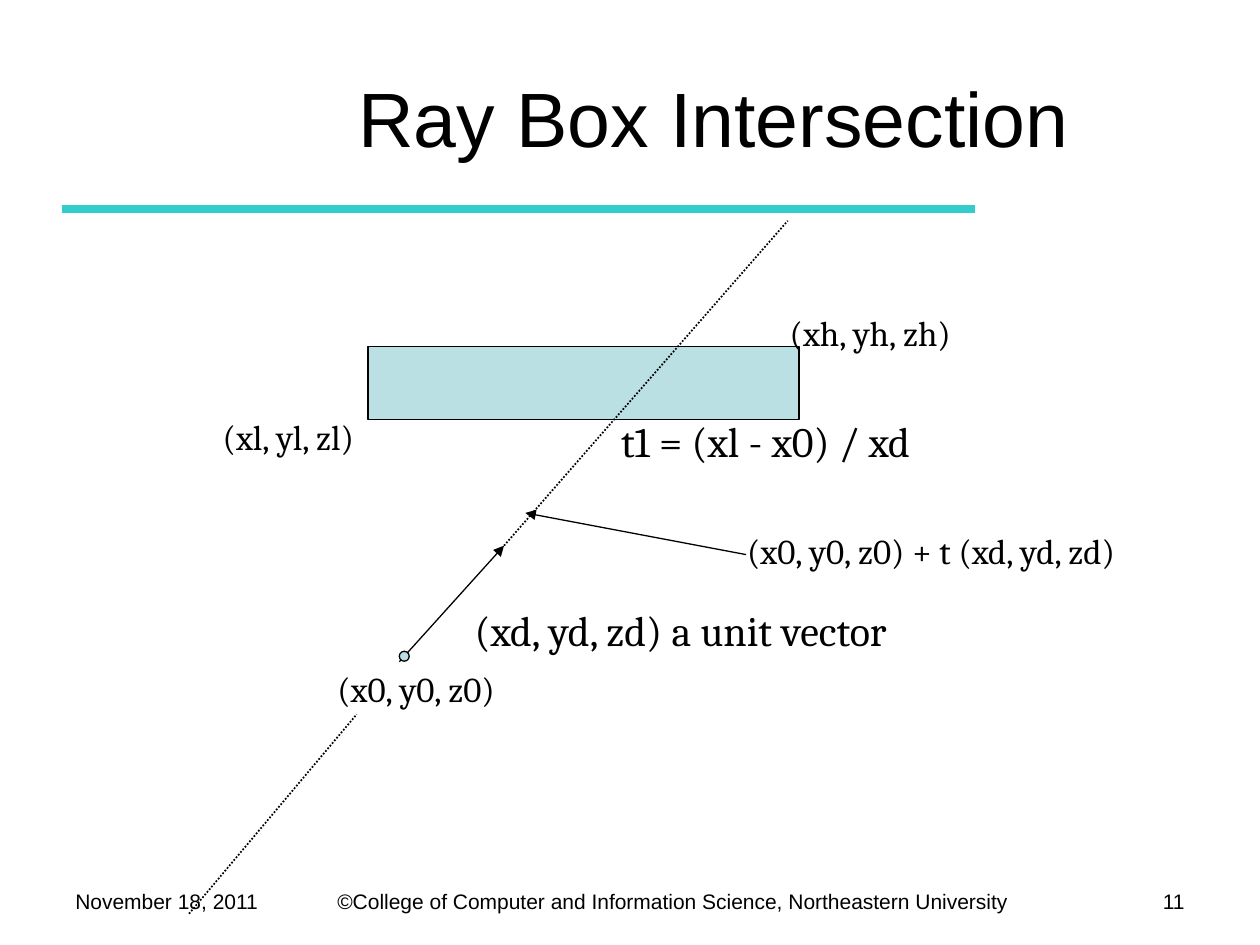
from lxml import etree
from pptx import Presentation
from pptx.dml.color import RGBColor
from pptx.enum.dml import MSO_LINE
from pptx.enum.shapes import MSO_CONNECTOR, MSO_SHAPE
from pptx.enum.text import MSO_ANCHOR, PP_ALIGN
from pptx.oxml.ns import qn
from pptx.util import Cm, Pt

BLACK = RGBColor(0x00, 0x00, 0x00)
TEAL = RGBColor(0x33, 0xCC, 0xCC)
PALE = RGBColor(0xBB, 0xE0, 0xE3)
LEFT, MID, RIGHT = PP_ALIGN.LEFT, PP_ALIGN.CENTER, PP_ALIGN.RIGHT
TOP, MIDDLE = MSO_ANCHOR.TOP, MSO_ANCHOR.MIDDLE
RECT, OVAL = MSO_SHAPE.RECTANGLE, MSO_SHAPE.OVAL
DOTS = MSO_LINE.ROUND_DOT
STRAIGHT = MSO_CONNECTOR.STRAIGHT

deck = Presentation()
deck.slide_width = Cm(25.4)
deck.slide_height = Cm(19.05)
slide = deck.slides.add_slide(deck.slide_layouts[6])
shapes = slide.shapes


def write(text, box, size=20, font="Cambria", align=LEFT, anchor=TOP):
    frame = shapes.add_textbox(*map(Cm, box)).text_frame
    frame.word_wrap = True
    frame.vertical_anchor = anchor
    par = frame.paragraphs[0]
    par.alignment = align
    run = par.add_run()
    run.text = text
    run.font.size = Pt(size)
    run.font.name = font
    run.font.color.rgb = BLACK


def draw(ends, width=0.75, color=BLACK, dash=None, arrow=False):
    line = shapes.add_connector(STRAIGHT, *map(Cm, ends))
    line.line.width = Pt(width)
    line.line.color.rgb = color
    if dash:
        line.line.dash_style = dash
    if arrow:
        etree.SubElement(line.line._get_or_add_ln(), qn("a:tailEnd"), type="triangle")
    etree.SubElement(line._element.spPr, qn("a:effectLst"))


draw((1.24, 4.22, 19.66, 4.22), width=4.5, color=TEAL)
write("Ray Box Intersection", (4.65, 0.76, 19.48, 3.18), size=44, font="Arial",
      align=MID, anchor=MIDDLE)

for text, box, align in (
    ("November 18, 2011", (1.27, 17.78, 4.45, 0.84), LEFT),
    ("©College of Computer and Information Science, Northeastern University",
     (6.55, 17.78, 14.38, 0.76), LEFT),
    ("11", (22.02, 17.78, 2.11, 0.89), RIGHT),
):
    write(text, box, size=12, font="Arial", align=align)

start, tip = (8.05, 13.34), (10.16, 11)
for kind, box in (
    (RECT, (7.42, 6.99, 8.69, 1.47)),
    (OVAL, (8.05, 13.13, 0.2, 0.2)),
):
    if kind == OVAL:
        draw(start + tip, arrow=True)
    shape = shapes.add_shape(kind, *map(Cm, box))
    shape.shadow.inherit = False
    shape.fill.solid()
    shape.fill.fore_color.rgb = PALE
    shape.line.color.rgb = BLACK
    shape.line.width = Pt(0.75)

draw(tip + (15.88, 4.45), width=1, dash=DOTS)
draw((3.81, 18.42, 7.19, 14.4), width=1, dash=DOTS)
draw((15.04, 11.18, 10.59, 10.34), arrow=True)

for text, x, y, width in (
    ("(xl, yl, zl)", 4.24, 8.26, 4.01),
    ("(xh, yh, zh)", 15.67, 6.15, 4.01),
    ("(x0, y0, z0)", 6.55, 13.34, 4.01),
    ("(x0, y0, z0) + t (xd, yd, zd)", 14.81, 10.54, 8.26),
):
    write(text, (x, y, width, 1.09))

write("(xd, yd, zd) a unit vector", (9.32, 12.07, 11.23, 1.27), size=24)
write("t1 = (xl - x0) / xd", (12.27, 8.26, 6.55, 1.27), size=24)

deck.save("out.pptx")
